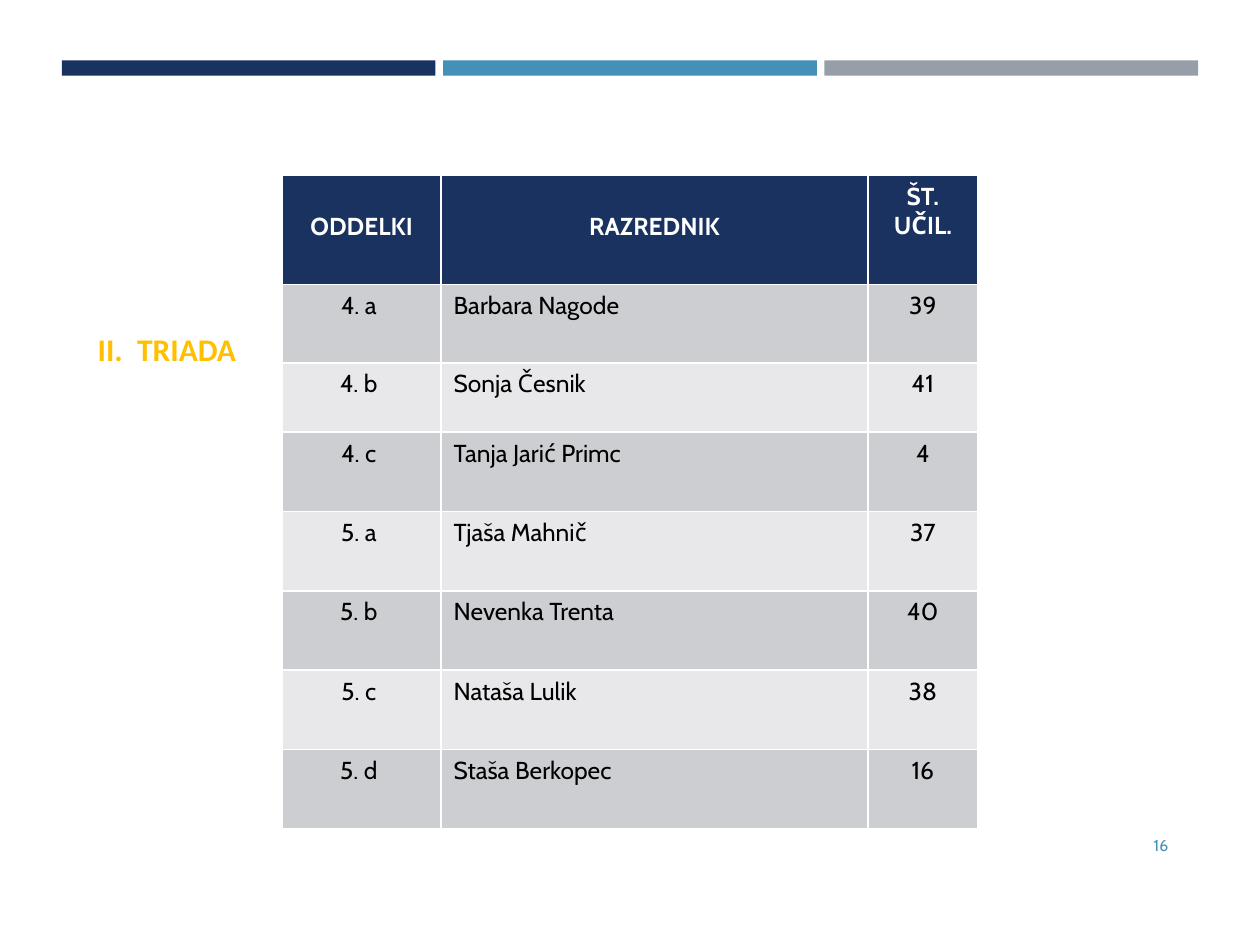
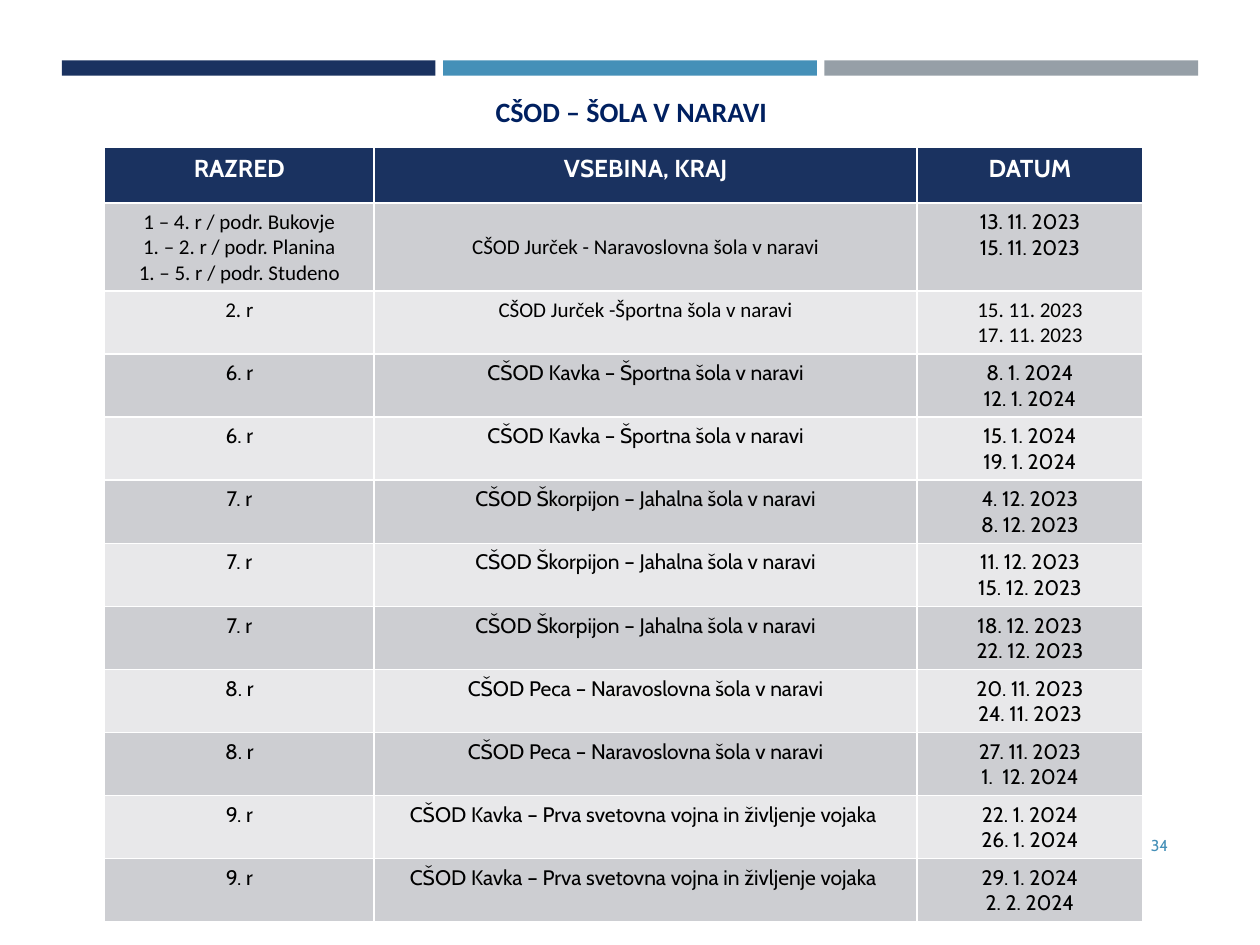
from dataclasses import dataclass

from pptx import Presentation, util as u
from pptx.dml.color import RGBColor
from pptx.enum import shapes, text

CENTER, LEFT, RIGHT = text.PP_ALIGN.CENTER, text.PP_ALIGN.LEFT, text.PP_ALIGN.RIGHT


@dataclass(frozen=True)
class Theme:
    width: float = 10
    height: float = 7.5
    navy: str = "1A3260"
    blue: str = "4590B8"
    gray: str = "969FA7"
    title: str = "002060"
    gold: str = "FFC000"
    white: str = "FFFFFF"
    black: str = "000000"
    stripes: tuple = ("CDCED2", "E8E8EA")
    body_font: str = "Cabin"
    head_font: str = "Calibri"
    number_size: int = 9
    small_size: int = 12
    table_size: int = 14
    title_size: int = 16
    label_size: int = 18


T = Theme()


def rgb(color):
    return RGBColor.from_string(color)


def write(tf, content, font, size, color, bold=False, align=CENTER):
    """Put one paragraph per line of content in a text frame."""
    for i, line in enumerate(content.split("\n")):
        p = tf.paragraphs[0] if i == 0 else tf.add_paragraph()
        p.text = line
        p.alignment = align
        p.font.name, p.font.size, p.font.bold = font, u.Pt(size), bold
        p.font.color.rgb = rgb(color)


def add_text(s, box, content, font, size, color, bold=False, align=CENTER, wrap=True):
    tf = s.shapes.add_textbox(*map(u.Inches, box)).text_frame
    tf.word_wrap = wrap
    write(tf, content, font, size, color, bold, align)
    return tf


def add_bands(s):
    """Three equal bands between the side margins."""
    margin, gap, height = 0.49, 0.06, 0.12
    width = (T.width - 2 * margin - 2 * gap) / 3
    for i, color in enumerate((T.navy, T.blue, T.gray)):
        box = margin + i * (width + gap), 0.48, width, height
        sp = s.shapes.add_shape(shapes.MSO_SHAPE.RECTANGLE, *map(u.Inches, box))
        sp.shadow.inherit = False
        sp.fill.solid()
        sp.fill.fore_color.rgb = rgb(color)
        sp.line.fill.background()


def add_slide(prs, number):
    s = prs.slides.add_slide(prs.slide_layouts[6])
    add_bands(s)
    tf = add_text(s, (8.53, 6.51, 0.84, 0.4), str(number), T.body_font,
                  T.number_size, T.blue, align=RIGHT)
    tf.vertical_anchor = text.MSO_ANCHOR.MIDDLE
    return s


def add_table(s, left, top, cols, heights, rows, size, aligns, fonts=None, drops=None):
    """Navy header over striped rows; fonts and drops hold exceptions by (row, column)."""
    fonts, drops = fonts or {}, drops or {}
    frame = s.shapes.add_table(len(rows), len(cols), *map(
        u.Inches, (left, top, sum(cols), sum(heights))))
    table = frame.table
    for column, width in zip(table.columns, cols):
        column.width = u.Inches(width)
    for r, (row, height) in enumerate(zip(rows, heights)):
        table.rows[r].height = u.Inches(height)
        head = r == 0
        for c, content in enumerate(row):
            cell = table.cell(r, c)
            cell.fill.solid()
            cell.fill.fore_color.rgb = rgb(T.navy if head else T.stripes[(r - 1) % 2])
            cell.margin_top = u.Inches(0.05 + drops.get((r, c), 0))
            write(cell.text_frame, content, fonts.get((r, c), T.body_font),
                  T.table_size if head else size, T.white if head else T.black,
                  head, CENTER if head else aligns[c])


def build_classes(prs):
    s = add_slide(prs, 16)
    rows = [
        ("ODDELKI", "RAZREDNIK", "ŠT. UČIL."),
        ("4. a ", "Barbara Nagode", "39"),
        ("4. b ", "Sonja Česnik", "41"),
        ("4. c ", "Tanja Jarić Primc", "4"),
        ("5. a ", "Tjaša Mahnič", "37"),
        ("5. b ", "Nevenka Trenta", "40"),
        ("5. c ", "Nataša Lulik", "38"),
        ("5. d ", "Staša Berkopec", "16"),
    ]
    one_line = 0.24
    add_table(s, 2.24, 1.39, (1.26, 3.39, 0.87), [0.87, 0.62, 0.55] + [0.63] * 5,
              rows, T.table_size, (CENTER, LEFT, CENTER),
              drops={(0, 0): one_line, (0, 1): one_line})
    add_text(s, (0.67, 2.57, 1.31, 0.4), "II.  TRIADA", T.head_font, T.label_size,
             T.gold, bold=True, wrap=False)


def build_outdoor_school(prs):
    s = add_slide(prs, 34)
    tf = add_text(s, (0.7, 0.73, 8.62, 0.44), "CŠOD – ŠOLA V NARAVI", T.head_font,
                  T.title_size, T.title, bold=True)
    tf.paragraphs[0].line_spacing = 0.9

    sport = "CŠOD Kavka – Športna šola v naravi"
    riding = "CŠOD Škorpijon – Jahalna šola v naravi"
    nature = "CŠOD Peca – Naravoslovna šola v naravi"
    war = "CŠOD Kavka – Prva svetovna vojna in življenje vojaka "
    rows = [
        ("RAZRED", "VSEBINA, KRAJ", "DATUM"),
        ("1 – 4. r / podr. Bukovje\n1. – 2. r / podr. Planina\n1. – 5. r / podr. Studeno",
         "CŠOD Jurček - Naravoslovna šola v naravi", "13. 11. 2023\n15. 11. 2023"),
        ("2. r", "CŠOD Jurček -Športna šola v naravi", "15. 11. 2023\n17. 11. 2023"),
        ("6. r", sport, "8. 1. 2024\n12. 1. 2024"),
        ("6. r", sport, "15. 1. 2024\n19. 1. 2024"),
        ("7. r", riding, "4. 12. 2023\n8. 12. 2023"),
        ("7. r", riding, "11. 12. 2023\n15. 12. 2023"),
        ("7. r", riding, "18. 12. 2023\n22. 12. 2023"),
        ("8. r", nature, "20. 11. 2023\n24. 11. 2023"),
        ("8. r", nature, "27. 11. 2023\n1.  12. 2024"),
        ("9. r", war, "22. 1. 2024\n26. 1. 2024"),
        ("9. r", war, "29. 1. 2024\n2. 2. 2024"),
    ]
    calibri_cells = [(1, 0), (1, 1), (2, 0), (2, 1), (2, 2)]
    add_table(s, 0.83, 1.17, (2.14, 4.31, 1.79), [0.44, 0.69] + [0.5] * 10,
              rows, T.small_size, (CENTER,) * 3,
              fonts=dict.fromkeys(calibri_cells, T.head_font), drops={(1, 1): 0.2})


def main():
    prs = Presentation()
    prs.slide_width, prs.slide_height = u.Inches(T.width), u.Inches(T.height)
    build_classes(prs)
    build_outdoor_school(prs)
    prs.save("out.pptx")


if __name__ == "__main__":
    main()
